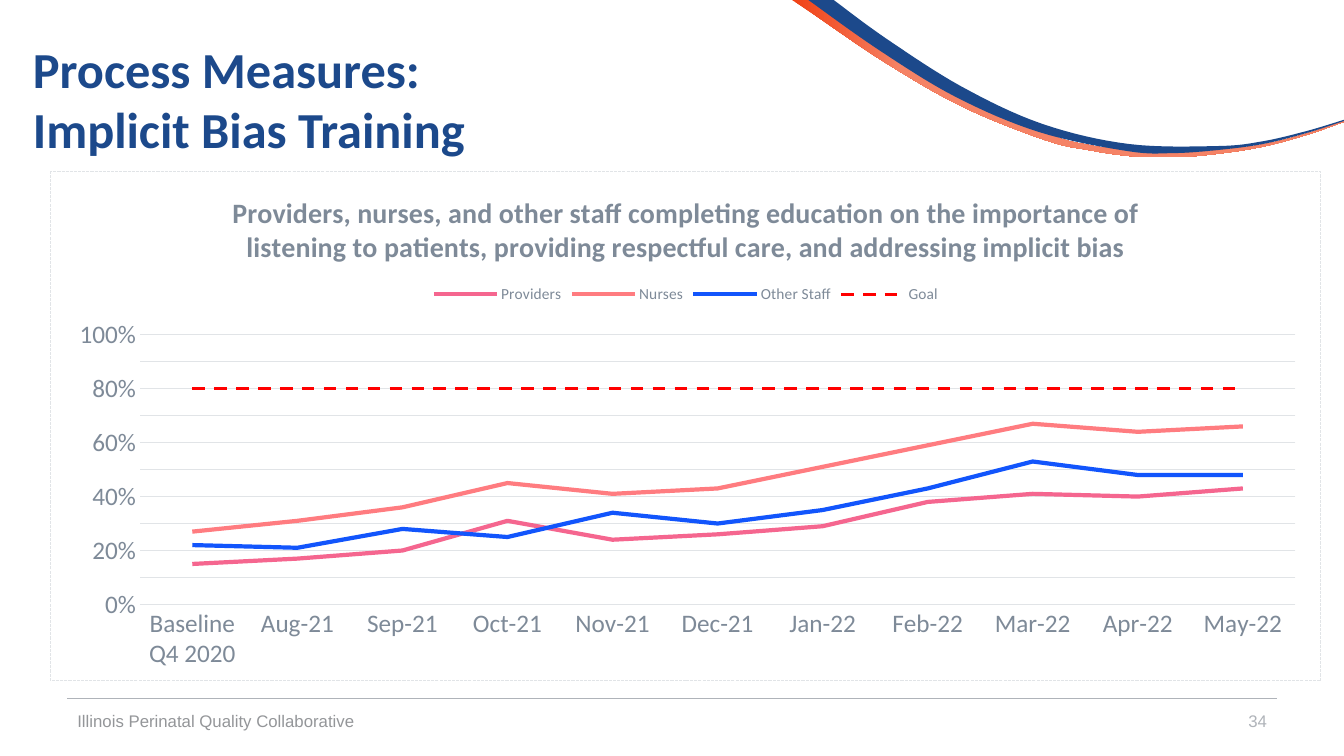
"""Builds the implicit bias training slide with its line chart of monthly results."""
from lxml.etree import SubElement
from pptx import Presentation
from pptx.chart.data import CategoryChartData
from pptx.dml.color import RGBColor
from pptx.enum.chart import XL_CHART_TYPE, XL_LEGEND_POSITION, XL_TICK_MARK
from pptx.enum.dml import MSO_LINE
from pptx.enum.shapes import MSO_CONNECTOR
from pptx.enum.text import MSO_ANCHOR, PP_ALIGN
from pptx.oxml import parse_xml
from pptx.oxml.ns import nsdecls, qn
from pptx.util import Cm, Pt

NAVY, SLATE, SILVER, PALE = "1C498B", "7E8A98", "AFB3B9", "E1E4E7"

MONTHS = ["Baseline Q4 2020", "Aug-21", "Sep-21", "Oct-21", "Nov-21", "Dec-21",
          "Jan-22", "Feb-22", "Mar-22", "Apr-22", "May-22"]
GROUPS = [
    ("Providers", "F5668F", 3, [15, 17, 20, 31, 24, 26, 29, 38, 41, 40, 43]),
    ("Nurses", "FF7C80", 3, [27, 31, 36, 45, 41, 43, 51, 59, 67, 64, 66]),
    ("Other Staff", "1255FC", 3, [22, 21, 28, 25, 34, 30, 35, 43, 53, 48, 48]),
    ("Goal", "FF0000", 2.25, [80] * len(MONTHS)),
]
ORANGE_TOP = [(20.45, 0), (22.4, 1.37), (24.33, 2.51), (26.39, 3.38), (27.46, 3.66),
              (28.58, 3.81), (29.67, 3.86), (30.78, 3.78), (31.9, 3.63),
              (32.99, 3.35), (33.87, 3.05)]
ORANGE_BOTTOM = [(33.87, 3.07), (32.99, 3.38), (31.9, 3.68), (30.81, 3.86),
                 (29.69, 3.96), (28.55, 3.94), (27.43, 3.78), (26.34, 3.53),
                 (24.26, 2.69), (22.3, 1.57), (20.42, 0.3), (19.96, 0)]
NAVY_TOP = [(21.01, 0), (22.33, 0.97), (24.23, 2.18), (26.26, 3.12), (28.45, 3.63),
            (30.71, 3.68), (31.83, 3.56), (32.94, 3.3), (33.87, 3.02)]
NAVY_BOTTOM = [(33.87, 3.05), (32.94, 3.35), (31.83, 3.63), (30.71, 3.78),
               (29.57, 3.86), (28.42, 3.81), (26.19, 3.33), (24.08, 2.44),
               (22.12, 1.24), (20.37, 0)]


def rgb(code):
    return RGBColor.from_string(code)


def smooth_edge(knots, steps=8):
    padded = [knots[0], *knots, knots[-1]]
    edge = [knots[0]]
    for a, b, c, d in zip(padded, padded[1:], padded[2:], padded[3:]):
        for step in range(1, steps + 1):
            t = step / steps
            edge.append(tuple(
                (2 * q + (r - p) * t + (2 * p - 5 * q + 4 * r - s) * t ** 2
                 + (3 * q - p - 3 * r + s) * t ** 3) / 2
                for p, q, r, s in zip(a, b, c, d)))
    return edge


class MeasureSlide:
    heading_font = "Calibri"
    footer_font = "Arial"

    def __init__(self, deck):
        self.shapes = deck.slides.add_slide(deck.slide_layouts[6]).shapes

    def style(self, font, size, color, name=heading_font, bold=False):
        font.name, font.size, font.bold = name, Pt(size), bold
        font.color.rgb = rgb(color)

    def wave(self, top, bottom, *colors):
        outline = [(Cm(x), Cm(y)) for x, y in smooth_edge(top) + smooth_edge(bottom)]
        builder = self.shapes.build_freeform(*outline[0])
        builder.add_line_segments(outline[1:], close=True)
        band = builder.convert_to_shape()
        band.shadow.inherit = False
        band.line.fill.background()
        if len(colors) == 1:
            band.fill.solid()
            band.fill.fore_color.rgb = rgb(colors[0])
            return
        band.fill.gradient()
        band.fill.gradient_angle = 0
        for stop, color, position in zip(band.fill.gradient_stops, colors, (0, 0.2)):
            stop.color.rgb = rgb(color)
            stop.position = position

    def rule(self, left, right, y):
        divider = self.shapes.add_connector(
            MSO_CONNECTOR.STRAIGHT, Cm(left), Cm(y), Cm(right), Cm(y))
        divider.line.color.rgb = rgb(SILVER)
        divider.line.width = Pt(0.5)
        SubElement(divider.element.find(qn("p:spPr")), qn("a:effectLst"))

    def text(self, wording, left, top, width, height, size, color,
             name=heading_font, bold=False, align=PP_ALIGN.LEFT):
        frame = self.shapes.add_textbox(
            Cm(left), Cm(top), Cm(width), Cm(height)).text_frame
        frame.word_wrap = True
        frame.vertical_anchor = MSO_ANCHOR.MIDDLE
        paragraph = frame.paragraphs[0]
        paragraph.text = wording
        paragraph.alignment = align
        self.style(paragraph.font, size, color, name, bold)

    def line_chart(self, heading, left, top, width, height):
        results = CategoryChartData(number_format="0%")
        results.categories = MONTHS
        for group, _, _, percents in GROUPS:
            results.add_series(group, [percent / 100 for percent in percents])
        chart = self.shapes.add_chart(
            XL_CHART_TYPE.LINE, Cm(left), Cm(top), Cm(width), Cm(height), results).chart
        self.style(chart.font, 10, "444C55")

        chart.has_title = True
        title = chart.chart_title.text_frame.paragraphs[0]
        title.text = heading
        self.style(title.font, 20, SLATE, bold=True)
        chart.chart_title.include_in_layout = False

        chart.has_legend = True
        chart.legend.position = XL_LEGEND_POSITION.TOP
        chart.legend.include_in_layout = False
        self.style(chart.legend.font, 11, SLATE)

        months, share = chart.category_axis, chart.value_axis
        for axis in (months, share):
            axis.major_tick_mark = axis.minor_tick_mark = XL_TICK_MARK.NONE
            self.style(axis.tick_labels.font, 18, SLATE)
        share.minimum_scale, share.maximum_scale, share.major_unit = 0, 1, 0.1
        share.tick_labels.number_format = "0%"
        share.tick_labels.number_format_is_linked = False
        share.format.line.fill.background()
        for line in (months.format.line, share.major_gridlines.format.line):
            line.color.rgb = rgb(PALE)
            line.width = Pt(0.75)

        plot = chart.plots[0]
        plot.vary_by_categories = False
        for series, (group, color, weight, _) in zip(plot.series, GROUPS):
            series.smooth = False
            series.format.line.color.rgb = rgb(color)
            series.format.line.width = Pt(weight)
            if group == "Goal":
                series.format.line.dash_style = MSO_LINE.DASH
        self.frame_chart(chart)

    def frame_chart(self, chart):
        body = chart.element.find(qn("c:chart"))
        body.addnext(parse_xml(
            f'<c:spPr {nsdecls("c", "a")}>'
            '<a:solidFill><a:srgbClr val="FFFFFF"/></a:solidFill>'
            f'<a:ln w="{Pt(0.75)}"><a:solidFill><a:srgbClr val="{PALE}"/></a:solidFill>'
            '<a:prstDash val="sysDash"/></a:ln></c:spPr>'))
        area = body.find(qn("c:plotArea"))
        for old in area.findall(qn("c:layout")):
            area.remove(old)
        layout = parse_xml(
            f'<c:layout {nsdecls("c")}><c:manualLayout><c:layoutTarget val="inner"/>'
            '<c:xMode val="edge"/><c:yMode val="edge"/><c:x val="0.07"/><c:y val="0.32"/>'
            '<c:w val="0.91"/><c:h val="0.53"/></c:manualLayout></c:layout>')
        area.insert(0, layout)


def main():
    deck = Presentation()
    deck.slide_width, deck.slide_height = Cm(33.87), Cm(19.05)
    slide = MeasureSlide(deck)
    slide.wave(ORANGE_TOP, ORANGE_BOTTOM, "F04115", "F58366")
    slide.wave(NAVY_TOP, NAVY_BOTTOM, NAVY)
    slide.rule(1.7, 32.18, 17.6)
    slide.text("Process Measures:\nImplicit Bias Training",
               0.58, 0.64, 30.48, 3.68, 36, NAVY, bold=True)
    slide.text("34", 24.56, 17.65, 7.62, 1.02, 12, SILVER,
               slide.footer_font, align=PP_ALIGN.RIGHT)
    slide.text("Illinois Perinatal Quality Collaborative",
               1.7, 17.65, 11.43, 1.02, 12, "949699", slide.footer_font)
    slide.line_chart(
        "Providers, nurses, and other staff completing education on the importance of "
        "listening to patients, providing respectful care, and addressing implicit bias",
        1.27, 4.32, 32.03, 12.85)
    deck.save("out.pptx")


if __name__ == "__main__":
    main()
